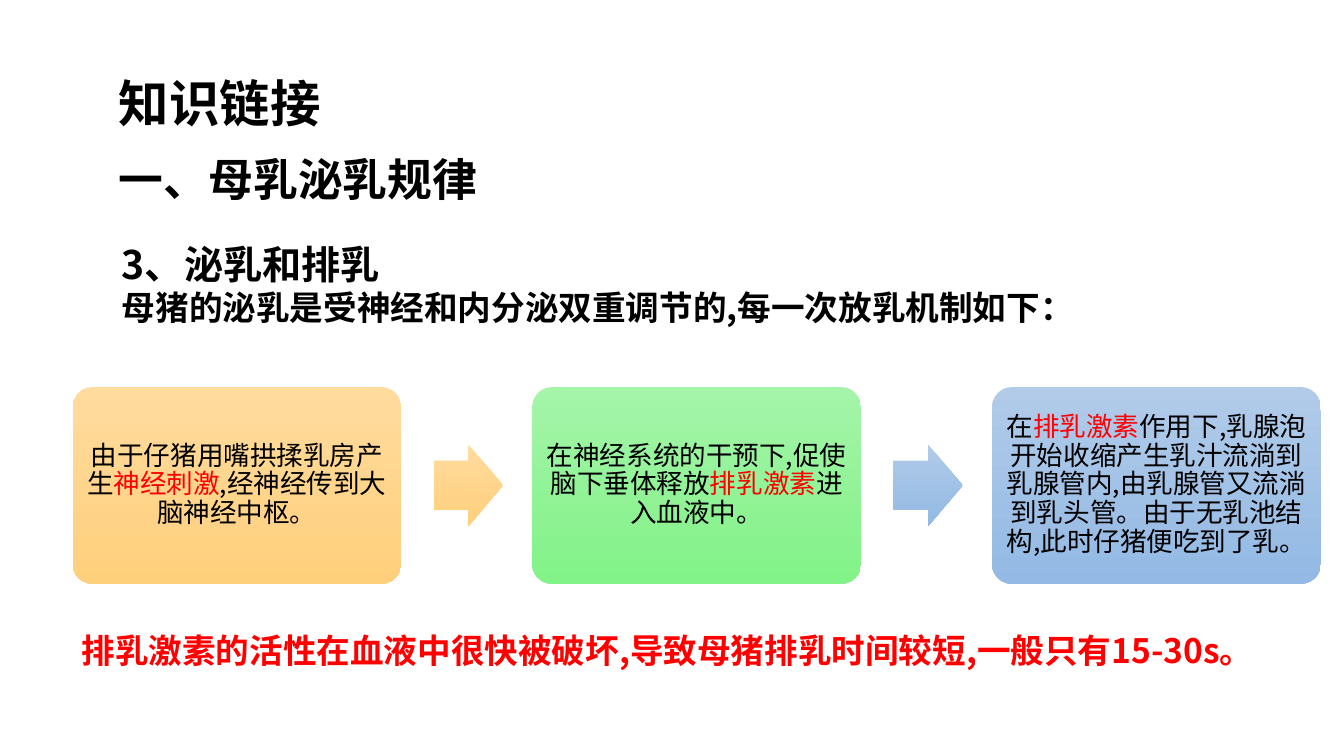
from dataclasses import dataclass

from lxml import etree
from pptx import Presentation
from pptx import util as u
from pptx.dml.color import RGBColor
from pptx.enum import shapes, text
from pptx.oxml.ns import qn

PX = 9144  # EMU per px, 100 px to the inch
FONT = "Noto Sans CJK SC"
BLACK = RGBColor(0x00, 0x00, 0x00)
RED = RGBColor(0xFF, 0x00, 0x00)
ORANGE = (RGBColor(0xFF, 0xDB, 0x9E), RGBColor(0xFF, 0xD0, 0x7C))
GREEN = (RGBColor(0xA4, 0xF4, 0xA9), RGBColor(0x82, 0xF3, 0x88))
BLUE = (RGBColor(0xB1, 0xCB, 0xE9), RGBColor(0x93, 0xB9, 0xE4))

STEP_LEFT, STEP_TOP, STEP_W, STEP_H, STEP_PITCH = 72, 384, 326, 195, 456
ARROW_W, ARROW_H, ARROW_OFFSET = 69, 81, 358


@dataclass
class Line:
    text: str
    size: int
    color: RGBColor = BLACK


@dataclass
class Block:
    box: tuple[int, int, int, int]
    lines: list[Line]


@dataclass
class Step:
    before: str
    key: str
    after: str
    colors: tuple[RGBColor, RGBColor]


BLOCKS = [
    Block((108, 67, 700, 74), [Line("知识链接", 36)]),
    Block((108, 146, 1192, 64), [Line("一、母乳泌乳规律", 32)]),
    Block((111, 233, 1162, 98), [
        Line("3、泌乳和排乳", 28),
        Line("母猪的泌乳是受神经和内分泌双重调节的,每一次放乳机制如下：", 24),
    ]),
    Block((71, 620, 1220, 50), [
        Line("排乳激素的活性在血液中很快被破坏,导致母猪排乳时间较短,一般只有15-30s。", 24, RED),
    ]),
]
STEPS = [
    Step("由于仔猪用嘴拱揉乳房产生", "神经刺激", ",经神经传到大脑神经中枢。", ORANGE),
    Step("在神经系统的干预下,促使脑下垂体释放", "排乳激素", "进入血液中。", GREEN),
    Step("在", "排乳激素",
         "作用下,乳腺泡开始收缩产生乳汁流淌到乳腺管内,由乳腺管又流淌到乳头管。"
         "由于无乳池结构,此时仔猪便吃到了乳。", BLUE),
]
ARROW_COLORS = [ORANGE, BLUE]


def emu(*lengths: int) -> list[u.Emu]:
    return [u.Emu(n * PX) for n in lengths]


def format_run(r, size: int, color: RGBColor, bold: bool = False) -> None:
    r.font.size = u.Pt(size)
    r.font.bold = bold
    r.font.color.rgb = color
    r.font.name = FONT
    etree.SubElement(r._r.get_or_add_rPr(), qn("a:ea"), typeface=FONT)


def add_block(s, block: Block) -> None:
    tf = s.shapes.add_textbox(*emu(*block.box)).text_frame
    tf.word_wrap = True
    tf.text = "\n".join(line.text for line in block.lines)
    for p, line in zip(tf.paragraphs, block.lines):
        format_run(p.runs[0], line.size, line.color, bold=True)


def add_gradient_shape(s, kind, box: tuple[int, int, int, int], colors, adjustments):
    """Add a borderless shape shaded from top to bottom."""
    sp = s.shapes.add_shape(kind, *emu(*box))
    sp.shadow.inherit = False
    sp.line.fill.background()
    for i, value in enumerate(adjustments):
        sp.adjustments[i] = value
    sp.fill.gradient()
    sp.fill.gradient_angle = 270
    for stop, color, position in zip(sp.fill.gradient_stops, colors, (0, 1)):
        stop.color.rgb = color
        stop.position = position
    return sp


def add_step(s, left: int, step: Step) -> None:
    sp = add_gradient_shape(s, shapes.MSO_SHAPE.ROUNDED_RECTANGLE,
                            (left, STEP_TOP, STEP_W, STEP_H), step.colors, [0.1])
    tf = sp.text_frame
    tf.word_wrap = True
    tf.vertical_anchor = text.MSO_ANCHOR.MIDDLE
    tf.margin_left, tf.margin_top, tf.margin_right, tf.margin_bottom = emu(8, 8, 8, 8)
    p = tf.paragraphs[0]
    p.alignment = text.PP_ALIGN.CENTER
    p.line_spacing = 0.9
    for part, color in ((step.before, BLACK), (step.key, RED), (step.after, BLACK)):
        r = p.add_run()
        r.text = part
        format_run(r, 19, color)


def main() -> None:
    prs = Presentation()
    prs.slide_width, prs.slide_height = emu(1333, 750)
    s = prs.slides.add_slide(prs.slide_layouts[6])
    for block in BLOCKS:
        add_block(s, block)
    for i, step in enumerate(STEPS):
        add_step(s, STEP_LEFT + i * STEP_PITCH, step)
    arrow_top = STEP_TOP + (STEP_H - ARROW_H) // 2
    for i, colors in enumerate(ARROW_COLORS):
        left = STEP_LEFT + i * STEP_PITCH + ARROW_OFFSET
        add_gradient_shape(s, shapes.MSO_SHAPE.RIGHT_ARROW,
                           (left, arrow_top, ARROW_W, ARROW_H), colors, [0.6, 0.5])
    prs.save("out.pptx")


if __name__ == "__main__":
    main()
